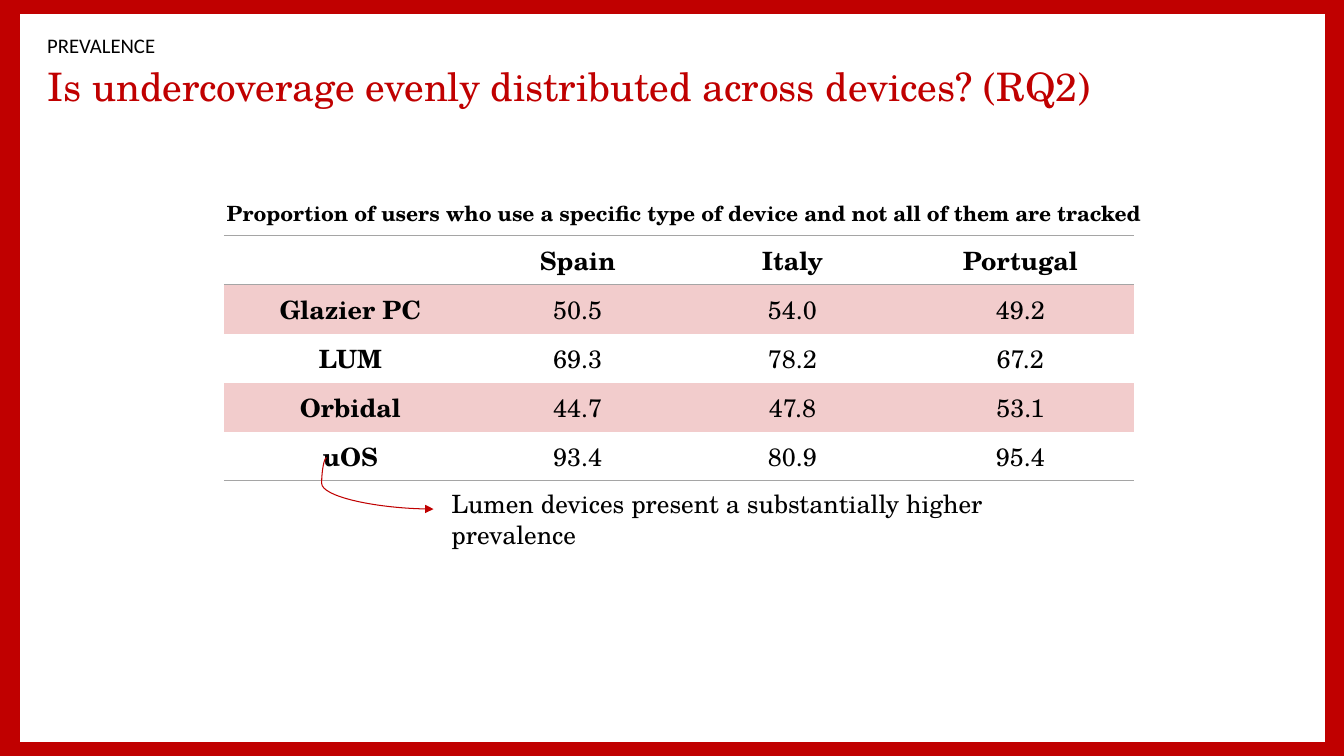
"""Build the slide on undercoverage by device type."""
from lxml import etree
from pptx import Presentation
from pptx.dml.color import RGBColor
from pptx.enum.shapes import MSO_CONNECTOR, MSO_SHAPE
from pptx.enum.text import MSO_ANCHOR, PP_ALIGN
from pptx.oxml import parse_xml
from pptx.oxml.ns import nsdecls, qn
from pptx.util import Inches, Pt

CURVE, RECTANGLE = MSO_CONNECTOR.CURVE, MSO_SHAPE.RECTANGLE
LEFT, CENTER, MIDDLE, TOP = PP_ALIGN.LEFT, PP_ALIGN.CENTER, MSO_ANCHOR.MIDDLE, MSO_ANCHOR.TOP
NO_TABLE_STYLE = "{2D5ABB26-0587-4C30-8999-92F81FD0307C}"

SERIF = "TeX Gyre Schola"
THEME = {
    "red": RGBColor.from_string("C00000"),
    "pink": RGBColor.from_string("F2CCCC"),
    "white": RGBColor.from_string("FFFFFF"),
    "black": RGBColor.from_string("000000"),
    "rule": "A5A5A5",
    "title": {"name": SERIF, "size": Pt(28), "bold": False},
    "section": {"name": "Calibri", "size": Pt(14.8), "bold": False},
    "caption": {"name": SERIF, "size": Pt(15), "bold": True},
    "label": {"name": SERIF, "size": Pt(18), "bold": True},
    "body": {"name": SERIF, "size": Pt(18), "bold": False},
}


def write(frame, text, style, color="black", align=LEFT, spacing=1.0):
    """Put one formatted paragraph into a text frame."""
    paragraph = frame.paragraphs[0]
    paragraph.alignment, paragraph.line_spacing = align, spacing
    run = paragraph.add_run()
    run.text = text
    for attribute, value in THEME[style].items():
        setattr(run.font, attribute, value)
    run.font.color.rgb = THEME[color]


def rule(cell, side):
    """Draw a thin grey rule on one side of a table cell."""
    cell._tc.get_or_add_tcPr().append(parse_xml(
        f'<a:{side} {nsdecls("a")} w="12700"><a:solidFill>'
        f'<a:srgbClr val="{THEME["rule"]}"/></a:solidFill></a:{side}>'))


prs = Presentation()
prs.slide_width, prs.slide_height = Inches(13.33), Inches(7.5)
slide = prs.slides.add_slide(prs.slide_layouts[5])
shapes = slide.shapes

slide.background.fill.solid()
slide.background.fill.fore_color.rgb = THEME["red"]
panel = shapes.add_shape(RECTANGLE, Inches(0.2), Inches(0.14), Inches(12.94), Inches(7.22))
panel.shadow.inherit = False
panel.fill.solid()
panel.fill.fore_color.rgb = THEME["white"]
panel.line.fill.background()
shapes._spTree.insert(2, panel._element)

title = shapes.title
title.left, title.top, title.width, title.height = map(Inches, (0.37, 0.65, 11.67, 0.47))
title.text_frame.vertical_anchor = MIDDLE
write(title.text_frame, "Is undercoverage evenly distributed across devices? (RQ2)",
      "title", "red", spacing=0.9)

texts = [
    ("PREVALENCE", "section", (0.37, 0.32, 11.28, 0.31), MIDDLE, 0.8),
    ("Proportion of users who use a specific type of device and not all of them are tracked",
     "caption", (2.15, 1.94, 9.39, 0.35), TOP, 1.0),
    ("Lumen devices present a substantially higher prevalence",
     "body", (4.38, 4.8, 6.3, 0.4), TOP, 1.0),
]
for text, style, place, anchor, spacing in texts:
    frame = shapes.add_textbox(*map(Inches, place)).text_frame
    frame.word_wrap, frame.vertical_anchor = True, anchor
    write(frame, text, style, spacing=spacing)

prevalence = [
    ("", "Spain", "Italy", "Portugal"),
    ("Glazier PC", "50.5", "54.0", "49.2"),
    ("LUM", "69.3", "78.2", "67.2"),
    ("Orbidal", "44.7", "47.8", "53.1"),
    ("uOS", "93.4", "80.9", "95.4"),
]
last_row = len(prevalence) - 1
table = shapes.add_table(len(prevalence), 4, Inches(2.22), Inches(2.34),
                         Inches(9.04), Inches(2.43)).table
table.first_row = table.horz_banding = False
table._tbl.tblPr.find(qn("a:tableStyleId")).text = NO_TABLE_STYLE
for column, width in zip(table.columns, (2.51, 2, 2.26, 2.26)):
    column.width = Inches(width)

for r, row in enumerate(prevalence):
    for c, value in enumerate(row):
        cell = table.cell(r, c)
        cell.vertical_anchor = MIDDLE
        if value:
            write(cell.text_frame, value, "label" if r == 0 or c == 0 else "body", align=CENTER)
        if r == 0:
            rule(cell, "lnT")
        if r in (0, last_row):
            rule(cell, "lnB")
        if r % 2:
            cell.fill.solid()
            cell.fill.fore_color.rgb = THEME["pink"]
        else:
            cell.fill.background()

arrow = shapes.add_connector(CURVE, Inches(3.24), Inches(4.54), Inches(4.3), Inches(5.05))
arrow.line.color.rgb = THEME["red"]
arrow.line.width = Pt(0.75)
arrow_properties = arrow._element.spPr
bend = arrow_properties.find(qn("a:prstGeom")).find(qn("a:avLst"))
etree.SubElement(bend, qn("a:gd"), name="adj1", fmla="val -4700")
etree.SubElement(arrow.line._get_or_add_ln(), qn("a:tailEnd"), type="triangle")
etree.SubElement(arrow_properties, qn("a:effectLst"))

prs.save("out.pptx")
